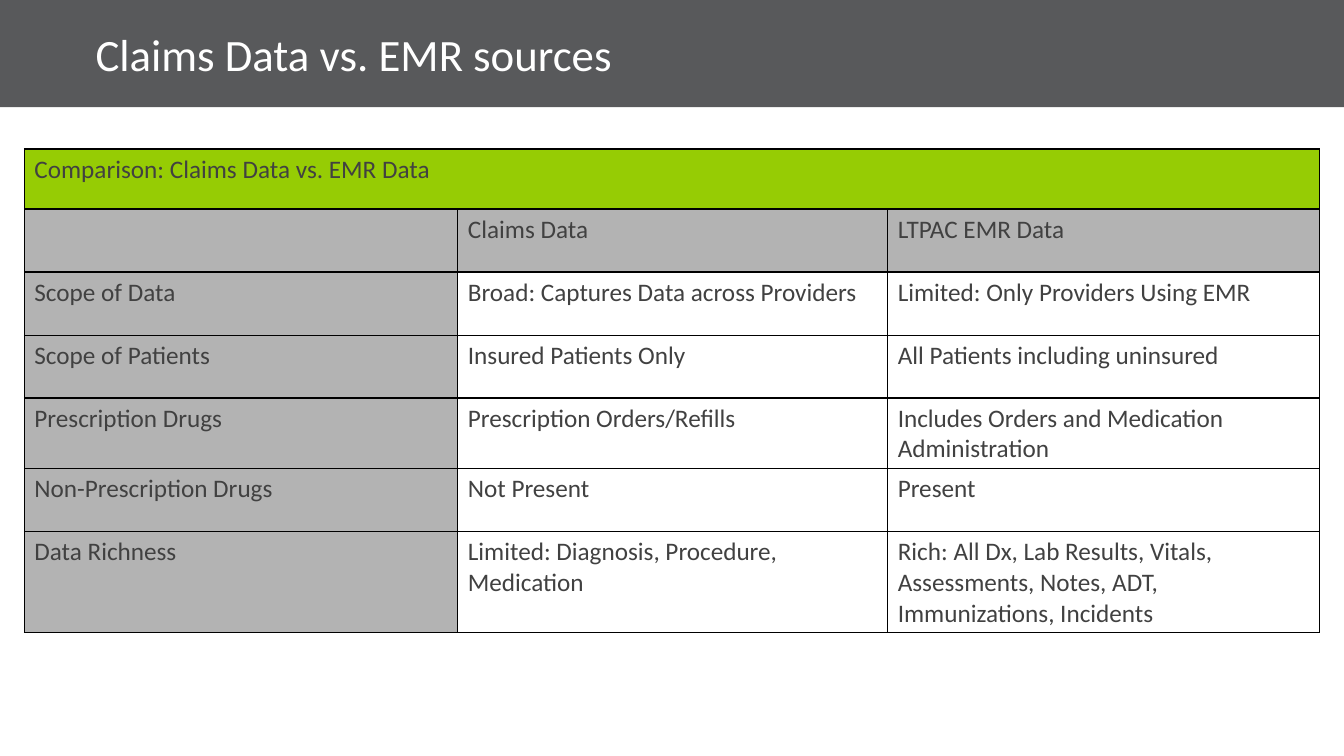
from lxml.etree import SubElement
from pptx import Presentation
from pptx.dml.color import RGBColor
from pptx.enum.shapes import MSO_SHAPE
from pptx.enum.text import MSO_ANCHOR
from pptx.oxml.ns import qn
from pptx.util import Pt

HEADER_GRAY, LABEL_GRAY, GREEN = "58595B", "B3B3B3", "96CC04"
TEXT_GRAY, WHITE, BLACK = "414141", "FFFFFF", "000000"

COMPARISON = [
    ("Comparison: Claims Data vs. EMR Data", "", ""),
    ("", "Claims Data", "LTPAC EMR Data"),
    ("Scope of Data", "Broad: Captures Data across Providers", "Limited: Only Providers Using EMR"),
    ("Scope of Patients", "Insured Patients Only", "All Patients including uninsured"),
    ("Prescription Drugs", "Prescription Orders/Refills",
     "Includes Orders and Medication Administration"),
    ("Non-Prescription Drugs", "Not Present", "Present"),
    ("Data Richness", "Limited: Diagnosis, Procedure, Medication",
     "Rich: All Dx, Lab Results, Vitals, Assessments, Notes, ADT, Immunizations, Incidents"),
]
COLUMN_WIDTHS = [309.6, 307.1, 308.5]
ROW_HEIGHTS = [43] + [45] * 6


def color(hex_code):
    return RGBColor.from_string(hex_code)


def set_font(paragraph, size, hex_code):
    font = paragraph.font
    font.name, font.size, font.bold = "Calibri", Pt(size), False
    font.color.rgb = color(hex_code)


def set_borders(cell, widths):
    """Draw black borders; widths maps left, right, top, bottom tags to points."""
    properties = cell._tc.get_or_add_tcPr()
    for position, (tag, width) in enumerate(widths.items()):
        line = SubElement(properties, qn(tag), w=str(Pt(width)))
        fill = SubElement(line, qn("a:solidFill"))
        SubElement(fill, qn("a:srgbClr"), val=BLACK)
        properties.insert(position, line)


def add_header(slide, left, top, width, height):
    # Full-width band
    band = slide.shapes.add_shape(MSO_SHAPE.RECTANGLE, Pt(left), Pt(top), Pt(width), Pt(height))
    band.shadow.inherit = False
    band.fill.solid()
    band.fill.fore_color.rgb = color(HEADER_GRAY)
    band.line.fill.background()

    # Title
    title = slide.shapes.add_textbox(Pt(left + 61.2), Pt(top + 5.5), Pt(width - 123), Pt(height - 5.5))
    frame = title.text_frame
    frame.word_wrap = True
    frame.vertical_anchor = MSO_ANCHOR.MIDDLE
    heading = frame.paragraphs[0]
    heading.text = "Claims Data vs. EMR sources"
    heading.line_spacing = 0.9
    set_font(heading, 32, WHITE)


def add_comparison(slide, left, top):
    table = slide.shapes.add_table(
        len(COMPARISON), len(COLUMN_WIDTHS), Pt(left), Pt(top),
        Pt(sum(COLUMN_WIDTHS)), Pt(sum(ROW_HEIGHTS))).table
    table.first_row = table.horz_banding = False
    for column, width in zip(table.columns, COLUMN_WIDTHS):
        column.width = Pt(width)
    for row, height in zip(table.rows, ROW_HEIGHTS):
        row.height = Pt(height)
    table.cell(0, 0).merge(table.cell(0, 2))

    for r, entries in enumerate(COMPARISON):
        for c, entry in enumerate(entries):
            cell = table.cell(r, c)
            cell.text = entry
            set_font(cell.text_frame.paragraphs[0], 18, TEXT_GRAY)
            # Green heading, gray labels, clear body
            if r > 1 and c > 0:
                cell.fill.background()
            else:
                cell.fill.solid()
                cell.fill.fore_color.rgb = color(GREEN if r == 0 else LABEL_GRAY)
            # Heavier rules below the two heading rows
            set_borders(cell, {"a:lnL": 1, "a:lnR": 1,
                               "a:lnT": 1.5 if r in (1, 2) else 1,
                               "a:lnB": 1.5 if r in (0, 1) else 1})


def main():
    presentation = Presentation()
    presentation.slide_width, presentation.slide_height = Pt(960), Pt(540)
    slide = presentation.slides.add_slide(presentation.slide_layouts[6])
    add_header(slide, 0, 0, 960, 76.5)
    add_comparison(slide, 17.4, 106.4)
    presentation.save("out.pptx")


if __name__ == "__main__":
    main()
